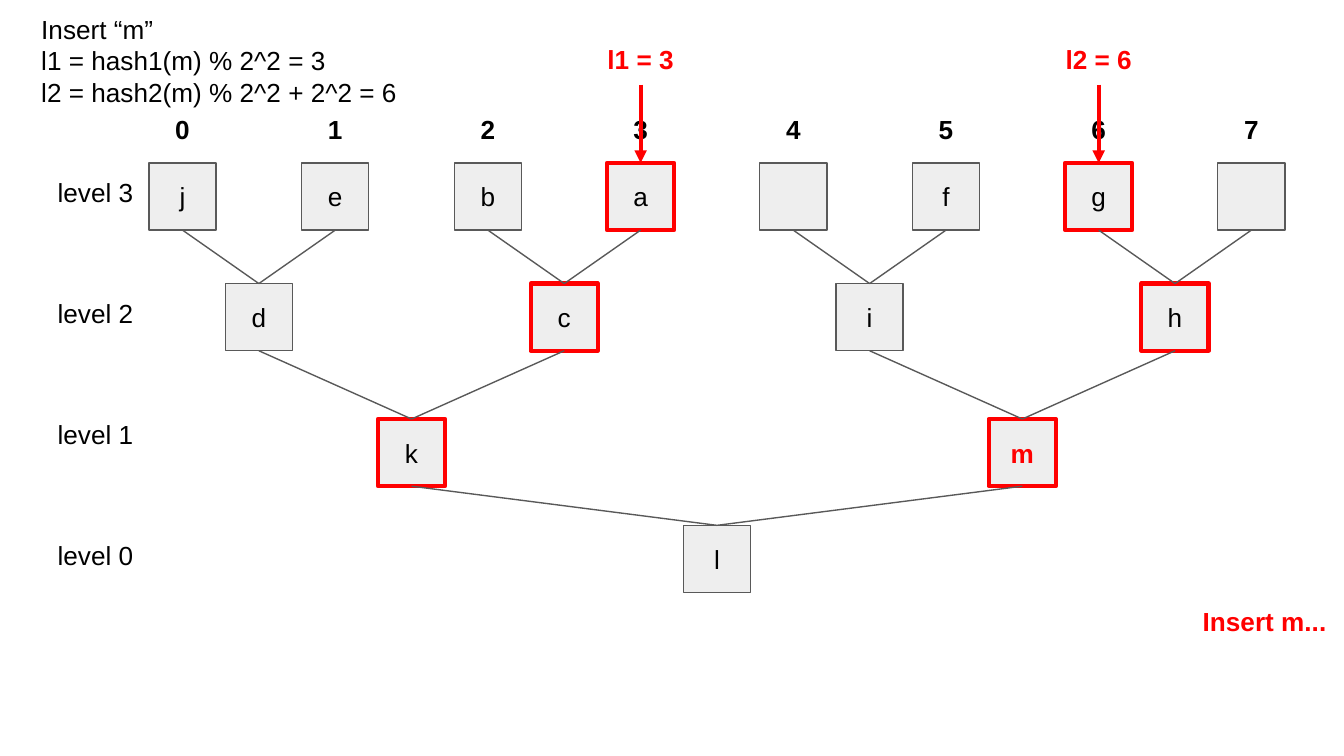
from lxml.etree import SubElement
from pptx import Presentation
from pptx.dml.color import RGBColor
from pptx.enum.shapes import MSO_CONNECTOR, MSO_SHAPE
from pptx.enum.text import MSO_ANCHOR, PP_ALIGN
from pptx.oxml.ns import qn
from pptx.util import Cm, Pt

COLORS = {"text": "000000", "box": "EEEEEE", "line": "595959", "accent": "FF0000"}
BOX = 1.27
FIRST_X, LAST_X = 3.45, 23.65  # centres of the outer top-level boxes
LEVEL_TOPS = [3.08, 5.36, 7.92, 9.93]  # level 3 down to level 0
LABEL_STEP = 2.29
TREE = [["j", "e", "b", "a", "", "f", "g", ""],
        ["d", "c", "i", "h"],
        ["k", "m"],
        ["l"]]
CANDIDATES = "agchkm"
INSERTED = "m"
HASHES = {"l1": 3, "l2": 6}


def rgb(name):
    return RGBColor.from_string(COLORS[name])


class TreeSlide:
    """Style and current slide; all lengths are in centimetres."""

    font, size, inset = "Arial", Pt(14), Cm(0.25)

    def __init__(self, prs):
        self.s = prs.slides.add_slide(prs.slide_layouts[6])

    def fill_text(self, sp, lines, color="text", bold=False,
                  align=PP_ALIGN.LEFT, anchor=MSO_ANCHOR.TOP):
        tf = sp.text_frame
        tf.word_wrap = True
        tf.vertical_anchor = anchor
        tf.margin_left = tf.margin_right = self.inset
        tf.margin_top = tf.margin_bottom = self.inset
        tf.text = "\n".join(lines)
        for p in tf.paragraphs:
            p.alignment = align
            p.font.name, p.font.size, p.font.bold = self.font, self.size, bold
            p.font.color.rgb = rgb(color)

    def text(self, x, y, w, h, *lines, **style):
        sp = self.s.shapes.add_textbox(Cm(x), Cm(y), Cm(w), Cm(h))
        self.fill_text(sp, lines, **style)

    def outline(self, line, highlighted):
        line.color.rgb = rgb("accent" if highlighted else "line")
        line.width = Pt(2.25 if highlighted else 0.75)

    def box(self, center, y, key):
        sp = self.s.shapes.add_shape(MSO_SHAPE.RECTANGLE, Cm(center - BOX / 2),
                                     Cm(y), Cm(BOX), Cm(BOX))
        sp.shadow.inherit = False
        sp.fill.solid()
        sp.fill.fore_color.rgb = rgb("box")
        self.outline(sp.line, key and key in CANDIDATES)
        if key:
            new = key == INSERTED
            self.fill_text(sp, [key], color="accent" if new else "text", bold=new,
                           align=PP_ALIGN.CENTER, anchor=MSO_ANCHOR.MIDDLE)
        return sp

    def connector(self, target, source=None, x=0, y=0, arrow=False):
        """Line to the top of target, from (x, y) or the bottom of source."""
        c = self.s.shapes.add_connector(MSO_CONNECTOR.STRAIGHT, Cm(x), Cm(y),
                                        Cm(x), Cm(y))
        if source is not None:
            c.begin_connect(source, 2)
        c.end_connect(target, 0)
        self.outline(c.line, arrow)
        spPr = c._element.spPr
        if arrow:
            SubElement(spPr.find(qn("a:ln")), qn("a:tailEnd"), type="triangle")
        SubElement(spPr, qn("a:effectLst"))


def main():
    prs = Presentation()
    prs.slide_width, prs.slide_height = Cm(25.4), Cm(14.29)
    slide = TreeSlide(prs)

    slide.text(0.53, 0, 18.8, 1.93, "Insert “m”", "l1 = hash1(m) % 2^2 = 3",
               "l2 = hash2(m) % 2^2 + 2^2 = 6")

    step = (LAST_X - FIRST_X) / (len(TREE[0]) - 1)
    slots = [FIRST_X + i * step for i in range(len(TREE[0]))]
    centers, levels = slots, []
    for depth, (keys, y) in enumerate(zip(TREE, LEVEL_TOPS)):
        if depth:  # each parent sits midway between its two children
            centers = [(a + b) / 2 for a, b in zip(centers[::2], centers[1::2])]
        slide.text(0.84, LEVEL_TOPS[0] + depth * LABEL_STEP, 2.1, BOX,
                   f"level {len(TREE) - 1 - depth}")
        levels.append([slide.box(x, y, key) for x, key in zip(centers, keys)])

    for children, parents in zip(levels, levels[1:]):
        for i, child in enumerate(children):
            slide.connector(parents[i // 2], source=child)

    for i, x in enumerate(slots):
        slide.text(x - 0.52, 1.8, 1.04, BOX, str(i), bold=True,
                   align=PP_ALIGN.CENTER, anchor=MSO_ANCHOR.MIDDLE)

    for name, i in HASHES.items():
        slide.connector(levels[0][i], x=slots[i], y=1.6, arrow=True)
        slide.text(slots[i] - 1.95, 0.58, 3.9, 1.02, f"{name} = {i}",
                   color="accent", bold=True, align=PP_ALIGN.CENTER)

    slide.text(17.65, 11.2, 7.67, 1.02, "Insert m...", color="accent",
               bold=True, align=PP_ALIGN.RIGHT)
    prs.save("out.pptx")


if __name__ == "__main__":
    main()
